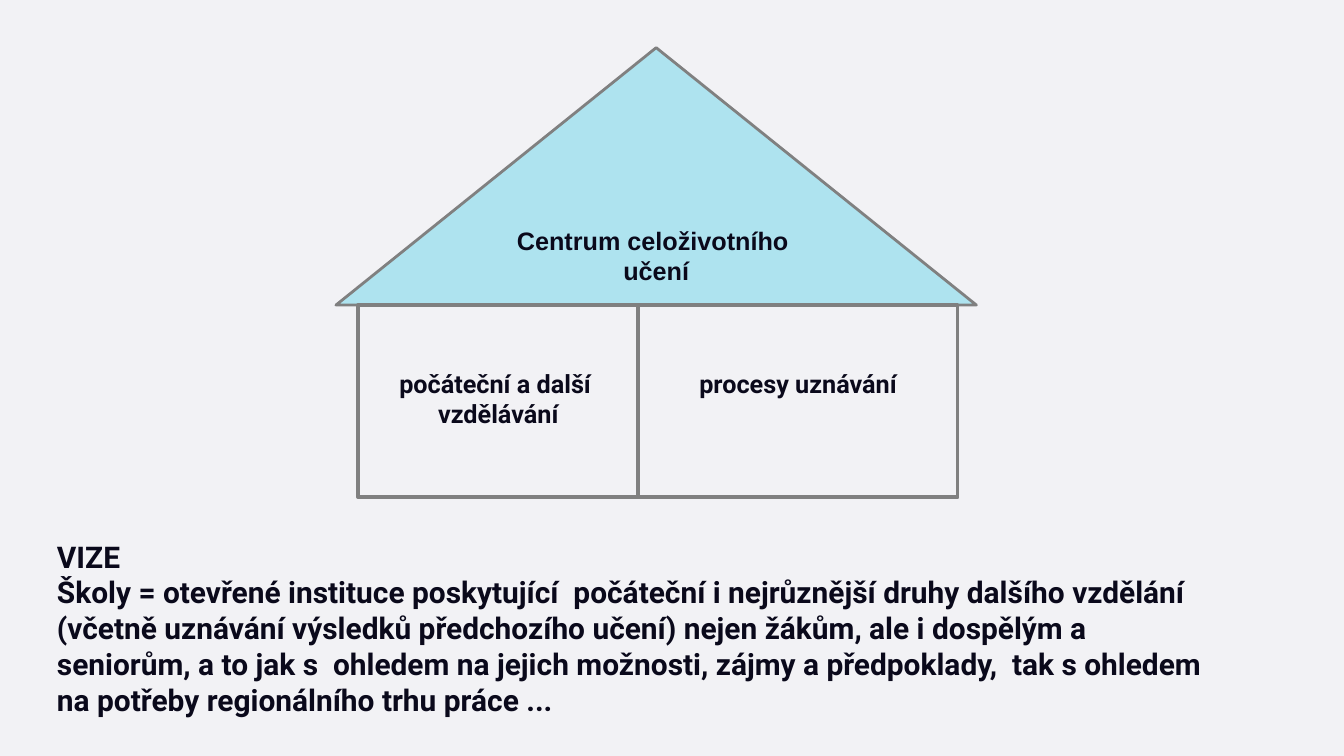
import pptx
import pptx.dml.color
import pptx.enum.shapes
import pptx.enum.text
import pptx.oxml
import pptx.oxml.ns
import pptx.util
from pptx.util import Inches, Pt

RGBColor = pptx.dml.color.RGBColor
SHAPE = pptx.enum.shapes.MSO_SHAPE
ANCHOR = pptx.enum.text.MSO_ANCHOR
ALIGN = pptx.enum.text.PP_ALIGN

BACKGROUND = RGBColor(0xF2, 0xF2, 0xF5)
ROOF_BLUE = RGBColor(0x6C, 0xD5, 0xEA)
OUTLINE = RGBColor(0x80, 0x80, 0x80)
INK = RGBColor(0x0A, 0x09, 0x1B)

ROOF_LINES = ["Centrum celoživotního ", "učení"]
ROOMS = [  # width in inches, lines of text
    (4.17, ["počáteční a další ", "vzdělávání"]),
    (4.75, ["procesy uznávání"]),
]
VISION = [
    "VIZE",
    "Školy = otevřené instituce poskytující  počáteční i nejrůznější druhy "
    "dalšího vzdělání (včetně uznávání výsledků předchozího učení) nejen žákům, "
    "ale i dospělým a seniorům, a to jak s  ohledem na jejich možnosti, zájmy a "
    "předpoklady,  tak s ohledem na potřeby regionálního trhu práce ...",
]

ROOF_LEFT, ROOF_TOP, ROOF_WIDTH, ROOF_HEIGHT = 5, 0.71, 9.53, 3.83
ROOMS_LEFT, ROOM_HEIGHT = 5.33, 2.86
EAVES = ROOF_TOP + ROOF_HEIGHT
LABEL_SIZE, VISION_SIZE = 27, 32


def write(frame, lines, size, font, align):
    for number, line in enumerate(lines):
        paragraph = frame.paragraphs[0] if number == 0 else frame.add_paragraph()
        paragraph.alignment = align
        run = paragraph.add_run()
        run.text = line
        run.font.name = font
        run.font.size = Pt(size)
        run.font.bold = True
        run.font.color.rgb = INK


def add_part(slide, preset, box, line_width, lines, font, anchor, top_inset):
    """Add an outlined, unfilled part of the house with its centred label."""
    part = slide.shapes.add_shape(preset, *map(Inches, box))
    part.shadow.inherit = False
    part.fill.background()
    part.line.color.rgb = OUTLINE
    part.line.width = Pt(line_width)
    frame = part.text_frame
    frame.vertical_anchor = anchor
    frame.margin_top = Inches(top_inset)
    write(frame, lines, LABEL_SIZE, font, ALIGN.CENTER)
    return part


def set_opacity(shape, percent):
    color = shape.fill._xPr.find(".//" + pptx.oxml.ns.qn("a:srgbClr"))
    alpha = pptx.oxml.parse_xml(
        f'<a:alpha {pptx.oxml.ns.nsdecls("a")} val="{percent * 1000}"/>')
    color.append(alpha)


def main():
    deck = pptx.Presentation()
    deck.slide_width, deck.slide_height = Inches(20), Inches(11.25)
    slide = deck.slides.add_slide(deck.slide_layouts[6])
    slide.background.fill.solid()
    slide.background.fill.fore_color.rgb = BACKGROUND

    roof = add_part(slide, SHAPE.ISOSCELES_TRIANGLE,
                    (ROOF_LEFT, ROOF_TOP, ROOF_WIDTH, ROOF_HEIGHT),
                    3, ROOF_LINES, "Arial", ANCHOR.MIDDLE, 0.48)
    roof.text_frame.word_wrap = False
    roof.fill.solid()
    roof.fill.fore_color.rgb = ROOF_BLUE
    set_opacity(roof, 50)

    left = ROOMS_LEFT
    for width, lines in ROOMS:
        room = add_part(slide, SHAPE.RECTANGLE, (left, EAVES, width, ROOM_HEIGHT),
                        4, lines, "Roboto", ANCHOR.TOP, 0.94)
        room.text_frame.word_wrap = True
        left += width

    vision = slide.shapes.add_textbox(
        Inches(0.75), Inches(7.96), Inches(17.5), Inches(2.79)).text_frame
    vision.word_wrap = True
    write(vision, VISION, VISION_SIZE, "Roboto", ALIGN.LEFT)

    deck.save("out.pptx")


if __name__ == "__main__":
    main()
